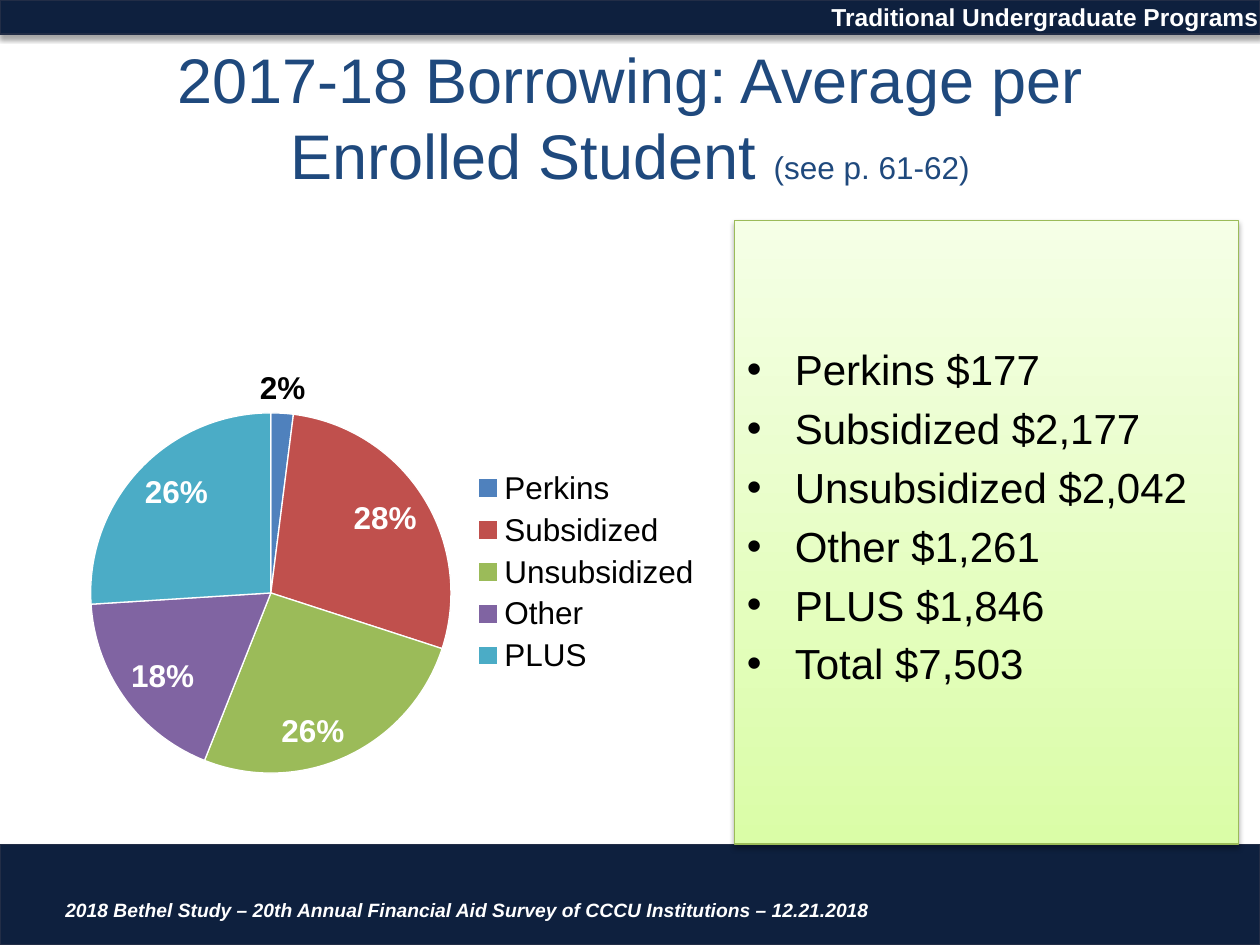
from lxml import etree
from pptx import Presentation
from pptx.chart.data import CategoryChartData
from pptx.dml.color import RGBColor
from pptx.enum.chart import XL_CHART_TYPE, XL_LABEL_POSITION, XL_LEGEND_POSITION
from pptx.enum.shapes import MSO_SHAPE
from pptx.enum.text import MSO_ANCHOR, PP_ALIGN
from pptx.oxml import parse_xml
from pptx.util import Inches, Pt

PIE = XL_CHART_TYPE.PIE
RIGHT = XL_LEGEND_POSITION.RIGHT
INSIDE, OUTSIDE = XL_LABEL_POSITION.INSIDE_END, XL_LABEL_POSITION.OUTSIDE_END
RECT = MSO_SHAPE.RECTANGLE
MIDDLE, TOP = MSO_ANCHOR.MIDDLE, MSO_ANCHOR.TOP
CENTER = PP_ALIGN.CENTER
A = "http://schemas.openxmlformats.org/drawingml/2006/main"
C = "http://schemas.openxmlformats.org/drawingml/2006/chart"

COLORS = {
    "navy": "0E203E", "edge": "222D46", "title": "1F497D",
    "white": "FFFFFF", "black": "000000",
    "pale": "F5FFE6", "lime": "DAFDA7", "green": "9BBB59",
}
LOANS = [
    ("Perkins", 2, "4F81BD", "$177"),
    ("Subsidized", 28, "C0504D", "$2,177"),
    ("Unsubsidized", 26, "9BBB59", "$2,042"),
    ("Other", 18, "8064A2", "$1,261"),
    ("PLUS", 26, "4BACC6", "$1,846"),
]


def style(font, size, color, bold=False, italic=False):
    font.name, font.size = "Arial", Pt(size)
    font.bold, font.italic = bold, italic
    font.color.rgb = RGBColor.from_string(COLORS[color])


def shade(shape):
    """Add a soft shadow that falls straight down."""
    shape._element.spPr.append(parse_xml(
        f'<a:effectLst xmlns:a="{A}"><a:outerShdw blurRad="39370" dist="22860" '
        'dir="5400000" rotWithShape="0"><a:srgbClr val="000000">'
        '<a:alpha val="35000"/></a:srgbClr></a:outerShdw></a:effectLst>'))


prs = Presentation()
prs.slide_width, prs.slide_height = Inches(10), Inches(7.5)
slide = prs.slides.add_slide(prs.slide_layouts[5])
shapes = slide.shapes

# Bands
for top, height in [(0, 0.27), (6.7, 0.8)]:
    band = shapes.add_shape(RECT, 0, Inches(top), Inches(10), Inches(height))
    band.fill.solid()
    band.fill.fore_color.rgb = RGBColor.from_string(COLORS["navy"])
    band.line.color.rgb = RGBColor.from_string(COLORS["edge"])
    band.line.width = Pt(0.75)
    shade(band)

# Title
title = shapes.title
title.left, title.top = Inches(0.5), Inches(0.3)
title.width, title.height = Inches(9), Inches(1.25)
title.text_frame.vertical_anchor = MIDDLE
line = title.text_frame.paragraphs[0]
line.alignment = CENTER
for text, size in [("2017-18 Borrowing: Average per Enrolled Student ", 36),
                   ("(see p. 61-62)", 18)]:
    run = line.add_run()
    run.text = text
    style(run.font, size, "title")

# Pie chart
data = CategoryChartData()
data.categories = [loan[0] for loan in LOANS]
data.add_series("Series 1", [loan[1] for loan in LOANS])
chart = shapes.add_chart(PIE, Inches(0.17), Inches(1.75),
                         Inches(5.5), Inches(5.58), data).chart
style(chart.font, 18, "black")
chart.has_title = False
chart.has_legend = True
chart.legend.position = RIGHT
chart.legend.include_in_layout = False

plot = chart.plots[0]
plot.vary_by_categories = True
series = plot.series[0]
labels = series.data_labels
labels.show_percentage, labels.show_value = True, False
labels.number_format, labels.number_format_is_linked = "0%", False
labels.position = INSIDE
style(labels.font, 18, "white", bold=True)

points = series.points
for i, (name, share, color, cost) in enumerate(LOANS):
    part = points[i].format
    part.fill.solid()
    part.fill.fore_color.rgb = RGBColor.from_string(color)
    part.line.color.rgb = RGBColor.from_string(COLORS["white"])
    part.line.width = Pt(0.75)
label = points[0].data_label
label.text_frame.text = "2%"
style(label.text_frame.paragraphs[0].runs[0].font, 18, "black", bold=True)
label.position = OUTSIDE

area = chart._chartSpace.chart.plotArea
for old in area.findall(f"{{{C}}}layout"):
    area.remove(old)
layout = etree.Element(f"{{{C}}}layout")
manual = etree.SubElement(layout, f"{{{C}}}manualLayout")
for tag, val in [("layoutTarget", "inner"), ("xMode", "edge"), ("yMode", "edge"),
                 ("x", "0.1"), ("y", "0.27"), ("w", "0.52"), ("h", "0.52")]:
    etree.SubElement(manual, f"{{{C}}}{tag}").set("val", val)
area.insert(0, layout)

# Loan list
box = shapes.add_textbox(Inches(5.83), Inches(1.75), Inches(4), Inches(4.95))
box.fill.gradient()
box.fill.gradient_angle = 270
for stop, color, place in zip(box.fill.gradient_stops, ("pale", "lime"), (0, 1)):
    stop.color.rgb = RGBColor.from_string(COLORS[color])
    stop.position = place
box.line.color.rgb = RGBColor.from_string(COLORS["green"])
box.line.width = Pt(1)
shade(box)
frame = box.text_frame
frame.word_wrap = True
frame.vertical_anchor = TOP
frame.margin_top = Inches(0.98)
rows = [f"{name} {cost}" for name, share, color, cost in LOANS]
frame.text = "\n".join(rows + ["Total $7,503"])
for i, para in enumerate(frame.paragraphs):
    props = para._p.get_or_add_pPr()
    props.set("marL", str(Inches(0.38)))
    props.set("indent", str(-Inches(0.38)))
    etree.SubElement(props, f"{{{A}}}buFont").set("typeface", "Arial")
    etree.SubElement(props, f"{{{A}}}buChar").set("char", "•")
    if i:
        para.space_before = Pt(4.8)
    style(para.runs[0].font, 24, "black")

# Footer and header text
for text, left, top, width, height, size, italic in [
    ("2018 Bethel Study – 20th Annual Financial Aid Survey of CCCU Institutions"
     " – 12.21.2018", 0.42, 7.08, 8.83, 0.42, 11, True),
    ("Traditional Undergraduate Programs", 6.5, -0.03, 3.92, 0.34, 14, False),
]:
    note = shapes.add_textbox(Inches(left), Inches(top), Inches(width), Inches(height))
    note.text_frame.word_wrap = True
    note.text_frame.text = text
    style(note.text_frame.paragraphs[0].runs[0].font, size, "white", True, italic)

prs.save("out.pptx")
